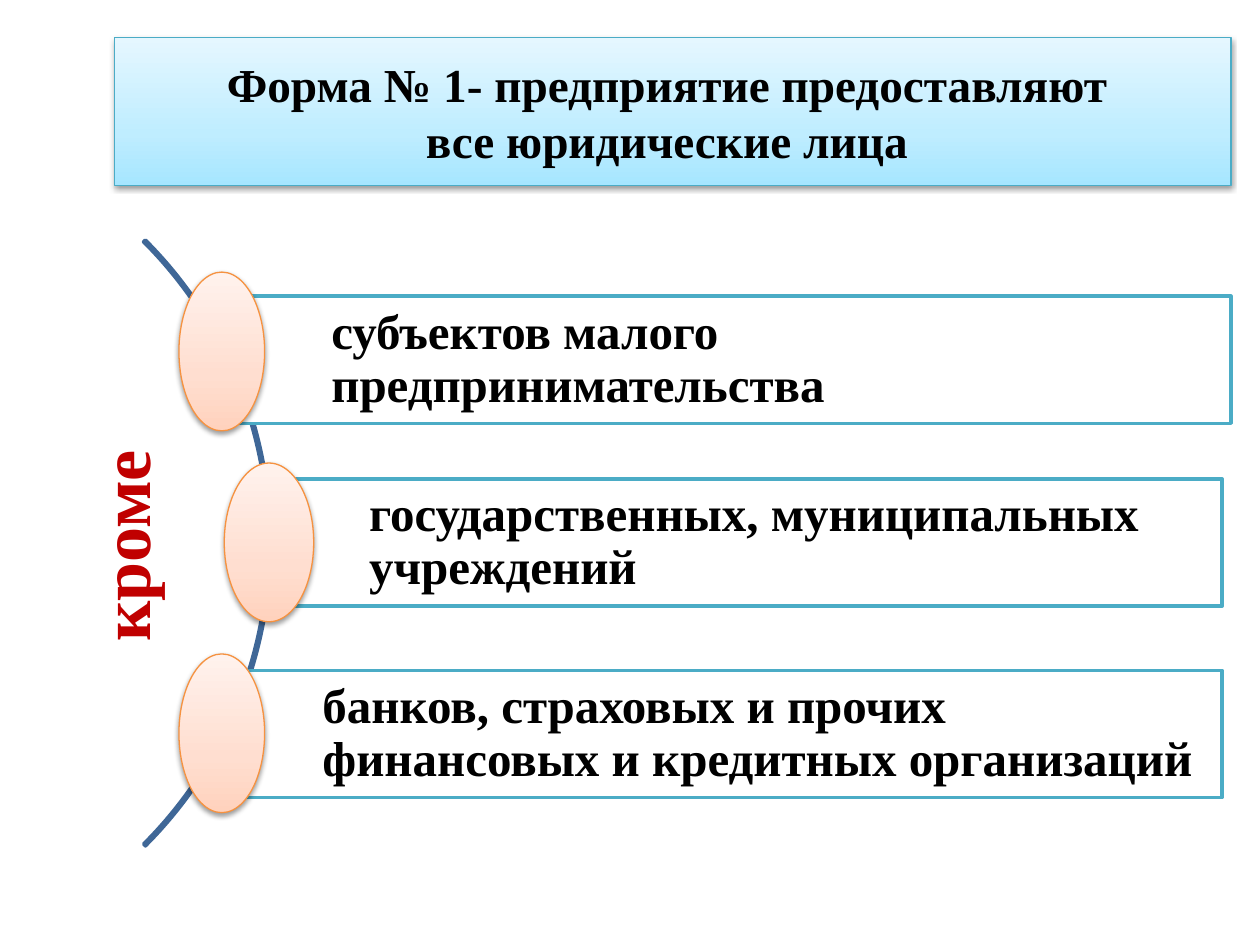
"""Build a slide listing the legal entities exempt from form No. 1."""
from dataclasses import dataclass

from lxml import etree
from pptx import Presentation
from pptx import util as u
from pptx.dml.color import RGBColor
from pptx.enum import shapes, text
from pptx.oxml.ns import qn

FONT = "Times New Roman"
COLORS = {
    "ink": "000000",
    "accent": "C00000",
    "paper": "FFFFFF",
    "frame": "4BACC6",
    "arc": "3F6797",
    "marker": "F69240",
}
TITLE_STOPS = ((0, "A6E6FF"), (35, "BFEDFF"), (100, "E5F7FF"))
MARKER_STOPS = ((0, "FFD2BD"), (35, "FFDED0"), (100, "FFF2ED"))
BAR_HEIGHT = 1.01
MARKER_HEIGHT = 1.26
MARKER_TOP = 2.16
MARKER_STEP = 1.515


@dataclass(frozen=True)
class Exemption:
    wording: str
    left: float
    top: float
    width: float
    marker_left: float
    marker_width: float


EXEMPTIONS = (
    Exemption("субъектов малого предпринимательства", 1.83, 2.35, 7.94, 1.42, 0.68),
    Exemption("государственных, муниципальных учреждений", 2.13, 3.8, 7.57, 1.78, 0.71),
    Exemption("банков, страховых и прочих финансовых и кредитных организаций",
              1.76, 5.32, 7.94, 1.42, 0.68),
)


def rgb(name: str) -> RGBColor:
    return RGBColor.from_string(COLORS[name])


def box(left: float, top: float, width: float, height: float) -> tuple:
    return tuple(u.Inches(value) for value in (left, top, width, height))


def outline(shape, color: str, points: float) -> None:
    shape.line.color.rgb = rgb(color)
    shape.line.width = u.Pt(points)


def fill_gradient(shape, stops: tuple) -> None:
    shape.fill.gradient()
    shape.fill.gradient_angle = 90
    stop_list = shape._element.spPr.find(f".//{qn('a:gsLst')}")
    for stop in list(stop_list):
        stop_list.remove(stop)
    for percent, color in stops:
        stop = etree.SubElement(stop_list, qn("a:gs"), pos=str(percent * 1000))
        etree.SubElement(stop, qn("a:srgbClr"), val=color)


def cast_shadow(shape) -> None:
    shape.shadow.inherit = False
    effects = shape._element.spPr.find(qn("a:effectLst"))
    shadow = etree.SubElement(
        effects, qn("a:outerShdw"), blurRad=str(u.Pt(3.1)), dist=str(u.Pt(1.6)),
        dir="5400000", rotWithShape="0")
    color = etree.SubElement(shadow, qn("a:srgbClr"), val=COLORS["ink"])
    etree.SubElement(color, qn("a:alpha"), val="38000")


def write(frame, wording: str, size: float, color: str, align) -> None:
    frame.text = wording
    for paragraph in frame.paragraphs:
        paragraph.alignment = align
        for run in paragraph.runs:
            run.font.name = FONT
            run.font.size = u.Pt(size)
            run.font.bold = True
            run.font.color.rgb = rgb(color)


def format_title(title) -> None:
    title.left, title.top, title.width, title.height = box(0.91, 0.3, 8.86, 1.17)
    fill_gradient(title, TITLE_STOPS)
    outline(title, "frame", 0.75)
    cast_shadow(title)
    title.text_frame.vertical_anchor = text.MSO_ANCHOR.MIDDLE
    write(title.text_frame,
          "Форма № 1- предприятие предоставляют \vвсе юридические лица ",
          27, "ink", text.PP_ALIGN.CENTER)


def draw_arc(slide) -> None:
    arc = slide.shapes.add_shape(shapes.MSO_SHAPE.BLOCK_ARC, *box(-4.65, 0.91, 6.8, 6.8))
    for index, value in enumerate((189, 27, 0.003)):
        arc.adjustments[index] = value
    arc.fill.background()
    outline(arc, "arc", 2)
    arc.shadow.inherit = False


def draw_exemption(slide, item: Exemption, index: int) -> None:
    bar = slide.shapes.add_shape(
        shapes.MSO_SHAPE.RECTANGLE, *box(item.left, item.top, item.width, BAR_HEIGHT))
    bar.fill.solid()
    bar.fill.fore_color.rgb = rgb("paper")
    outline(bar, "frame", 2)
    bar.shadow.inherit = False
    frame = bar.text_frame
    frame.word_wrap = True
    frame.vertical_anchor = text.MSO_ANCHOR.MIDDLE
    frame.margin_left = u.Inches(0.8)
    frame.margin_top = frame.margin_right = frame.margin_bottom = u.Inches(0.08)
    write(frame, item.wording, 28, "ink", text.PP_ALIGN.LEFT)
    frame.paragraphs[0].line_spacing = 0.9

    marker = slide.shapes.add_shape(
        shapes.MSO_SHAPE.OVAL,
        *box(item.marker_left, MARKER_TOP + index * MARKER_STEP,
             item.marker_width, MARKER_HEIGHT))
    fill_gradient(marker, MARKER_STOPS)
    outline(marker, "marker", 0.75)
    cast_shadow(marker)


def draw_except_label(slide) -> None:
    label = slide.shapes.add_textbox(*box(0.59, 3.55, 0.88, 1.64))
    frame = label.text_frame
    write(frame, "кроме", 40, "accent", text.PP_ALIGN.LEFT)
    frame.word_wrap = False
    frame.auto_size = text.MSO_AUTO_SIZE.SHAPE_TO_FIT_TEXT
    frame._txBody.bodyPr.set("vert", "vert270")


def main() -> None:
    deck = Presentation()
    deck.slide_width, deck.slide_height = u.Inches(10), u.Inches(7.5)
    slide = deck.slides.add_slide(deck.slide_layouts[5])
    format_title(slide.shapes.title)
    draw_arc(slide)
    for index, item in enumerate(EXEMPTIONS):
        draw_exemption(slide, item, index)
    draw_except_label(slide)
    deck.save("out.pptx")


if __name__ == "__main__":
    main()
